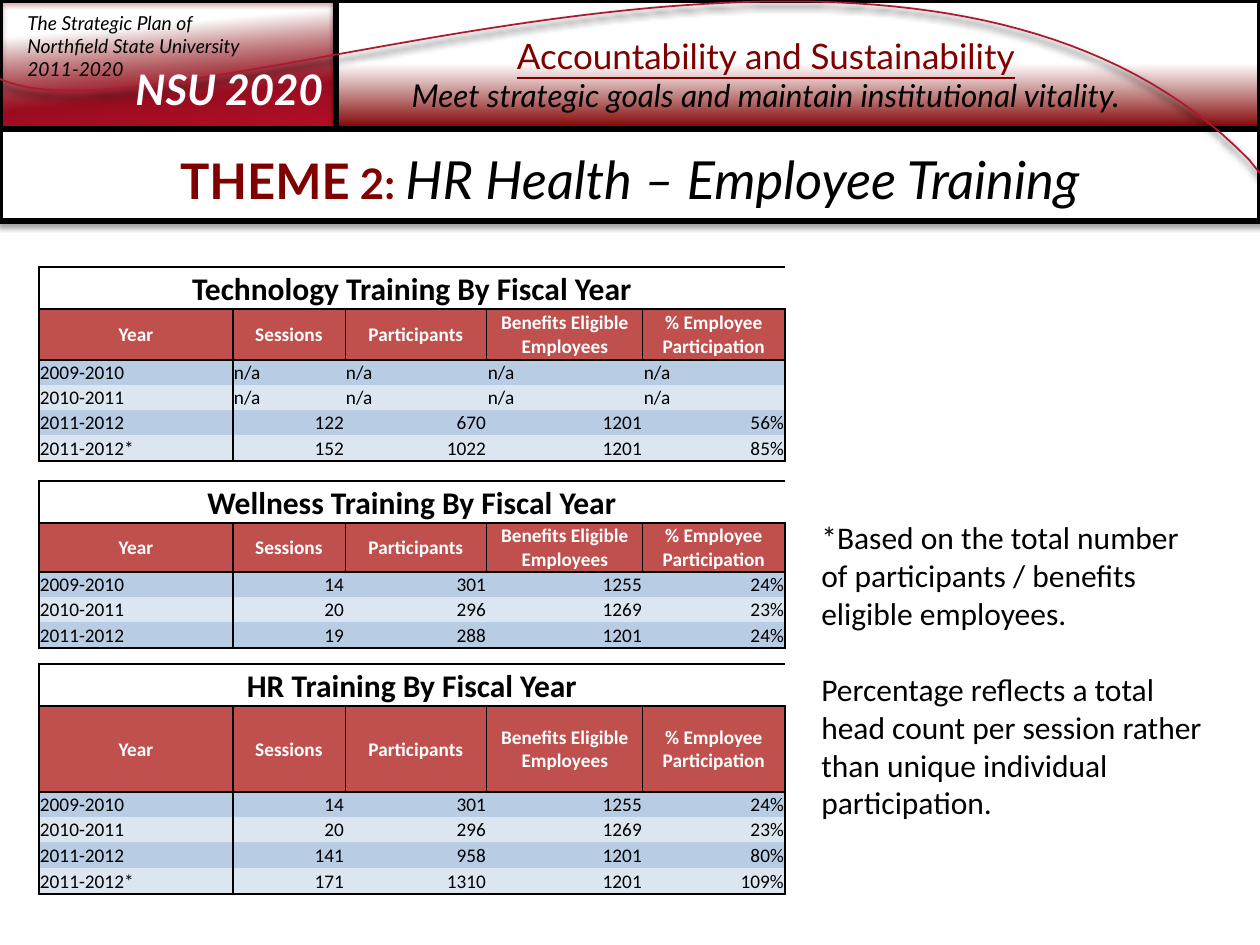
import pptx
import pptx.util
import pptx.oxml
import pptx.oxml.ns
from pptx.dml.color import RGBColor
from pptx.enum.shapes import MSO_SHAPE
from pptx.enum.text import MSO_ANCHOR, PP_ALIGN

PX = 914400 / 126
BLACK = RGBColor(0, 0, 0)
WHITE = RGBColor(255, 255, 255)
MAROON = RGBColor(0x80, 0, 0)
CURVE = RGBColor(0xAC, 0x1A, 0x2F)
HEAD = RGBColor(0xC0, 0x50, 0x4D)
BANDS = [RGBColor(0xB8, 0xCC, 0xE4), RGBColor(0xDC, 0xE6, 0xF1)]
NS = pptx.oxml.ns.nsdecls("a")
LEFT, MID, RIGHT = PP_ALIGN.LEFT, PP_ALIGN.CENTER, PP_ALIGN.RIGHT


def emu(*nums):
    return [pptx.util.Emu(round(n * PX)) for n in nums]


def write(par, words, size, face, color, align=LEFT, bold=False, italic=False, under=False):
    """Add one styled run to a paragraph."""
    par.alignment = align
    run = par.add_run()
    run.text = words
    font = run.font
    font.size, font.name = pptx.util.Pt(size), face
    font.color.rgb = color
    font.bold, font.italic, font.underline = bold, italic, under


prs = pptx.Presentation()
prs.slide_width, prs.slide_height = emu(1260, 945)
slide = prs.slides.add_slide(prs.slide_layouts[6])
shapes = slide.shapes

# Header bars: box, gradient stops (place, colour, opacity), angle, shadow colour
bars = [
    ((0, 0, 336, 129), [(24, MAROON, 0), (71, "9A0D21", 100), (100, "B70F27", 100)], 85, MAROON),
    ((336, 0, 924, 129), [(0, MAROON, 100), (51, WHITE, 100)], 270, BLACK),
    ((0, 129, 1260, 92), None, 0, BLACK),
]
cast = []
for box, stops, angle, shade in bars:
    bar = shapes.add_shape(MSO_SHAPE.RECTANGLE, *emu(*box))
    bar.line.color.rgb = BLACK
    bar.line.width = pptx.util.Pt(3.5)
    bar.fill.solid()
    bar.fill.fore_color.rgb = WHITE
    if stops:
        marks = "".join(
            f'<a:gs pos="{at * 1000}"><a:srgbClr val="{hue}">'
            f'<a:alpha val="{show * 1000}"/></a:srgbClr></a:gs>'
            for at, hue, show in stops)
        grad = pptx.oxml.parse_xml(
            f'<a:gradFill {NS} rotWithShape="1"><a:gsLst>{marks}</a:gsLst>'
            f'<a:lin ang="{angle * 60000}" scaled="0"/></a:gradFill>')
        props = bar.fill._xPr
        props.replace(props.find(pptx.oxml.ns.qn("a:solidFill")), grad)
    cast.append((bar, shade, 35, 3.1, 1.8))

# Sweeping line, a cubic curve that starts at the right edge
knots = [(1338, 287), (1067, -261), (183, 164), (0, 79)]
steps = 80
dots = []
for n in range(steps + 1):
    t = 0.08 + 0.92 * n / steps
    parts = [(1 - t) ** 3, 3 * t * (1 - t) ** 2, 3 * t * t * (1 - t), t ** 3]
    x, y = (sum(w * k[axis] for w, k in zip(parts, knots)) for axis in (0, 1))
    dots.append((min(x, 1260) * PX, y * PX))
path = shapes.build_freeform(*dots[0])
path.add_line_segments(dots[1:], close=False)
sweep = path.convert_to_shape()
sweep.fill.background()
sweep.line.color.rgb = CURVE
sweep.line.width = pptx.util.Pt(1)
cast.append((sweep, BLACK, 90, 4, 3))

for shape, shade, show, blur, dist in cast:
    shape.shadow.inherit = False
    glow = shape._element.spPr.find(pptx.oxml.ns.qn("a:effectLst"))
    glow.append(pptx.oxml.parse_xml(
        f'<a:outerShdw {NS} blurRad="{round(blur * 12700)}" dist="{round(dist * 12700)}"'
        f' dir="5400000" rotWithShape="0"><a:srgbClr val="{shade}">'
        f'<a:alpha val="{show * 1000}"/></a:srgbClr></a:outerShdw>'))

# Text boxes: box, gap before later paragraphs, paragraphs of runs
small = dict(size=11, face="Lato", color=BLACK, italic=True)
note = dict(size=18, face="Calibri", color=BLACK)
texts = [
    ((15, 5, 402, 83), 0, [
        [("The Strategic Plan of", small)],
        [("Northfield State University", small)],
        [("2011-2020", small)]]),
    ((304, 28, 924, 93), 0, [
        [("Accountability and Sustainability",
          dict(size=20, face="Lato", color=MAROON, align=MID, under=True))],
        [("Meet strategic goals and maintain institutional vitality.",
          dict(size=18, face="Lato", color=BLACK, align=MID, italic=True))]]),
    ((123, 57, 219, 63), 0, [
        [("NSU 2020", dict(size=24, face="Lato", color=WHITE, bold=True, italic=True))]]),
    ((0, 141, 1260, 77), 0, [
        [("THEME", dict(size=28, face="Lato", color=MAROON, align=MID, bold=True)),
         (" 2: ", dict(size=24, face="Lato", color=MAROON, align=MID, bold=True)),
         ("HR Health – Employee Training",
          dict(size=30, face="Lato", color=BLACK, align=MID, italic=True))]]),
    ((809, 512, 406, 318), 22, [
        [("*Based on the total number of participants / benefits eligible employees.", note)],
        [("Percentage reflects a total head count per session rather than unique "
          "individual participation.", note)]]),
]
for box, gap, pars in texts:
    frame = shapes.add_textbox(*emu(*box)).text_frame
    frame.word_wrap = True
    for n, runs in enumerate(pars):
        par = frame.add_paragraph() if n else frame.paragraphs[0]
        if n and gap:
            par.space_before = pptx.util.Pt(gap)
        for words, style in runs:
            write(par, words, **style)

# Training tables: title, top, row heights, body rows
heads = ["Year", "Sessions", "Participants", "Benefits Eligible Employees",
         "% Employee Participation"]
wide = [194, 112, 142, 156, 142]
none = ["n/a"] * 4
tables = [
    ("Technology Training By Fiscal Year", 267, [42, 51, 25, 25, 25, 26], [
        ["2009-2010", *none],
        ["2010-2011", *none],
        ["2011-2012", "122", "670", "1201", "56%"],
        ["2011-2012*", "152", "1022", "1201", "85%"]]),
    ("Wellness Training By Fiscal Year", 481, [42, 49, 25, 25, 26], [
        ["2009-2010", "14", "301", "1255", "24%"],
        ["2010-2011", "20", "296", "1269", "23%"],
        ["2011-2012", "19", "288", "1201", "24%"]]),
    ("HR Training By Fiscal Year", 664, [42, 86, 25, 25, 26, 26], [
        ["2009-2010", "14", "301", "1255", "24%"],
        ["2010-2011", "20", "296", "1269", "23%"],
        ["2011-2012", "141", "958", "1201", "80%"],
        ["2011-2012*", "171", "1310", "1201", "109%"]]),
]
for title, top, tall, body in tables:
    rows = [[title, "", "", "", ""], heads, *body]
    last = len(rows)
    grid = shapes.add_table(last, 5, *emu(39, top, sum(wide), sum(tall))).table
    grid.first_row = grid.horz_banding = False
    for col, size in zip(grid.columns, emu(*wide)):
        col.width = size
    for row, size in zip(grid.rows, emu(*tall)):
        row.height = size
    grid.cell(0, 0).merge(grid.cell(0, 4))
    for r, row in enumerate(rows):
        upright = [(0, 5), range(6), (0, 1, 5)][min(r, 2)]
        for c, words in enumerate(row):
            cell = grid.cell(r, c)
            cell.margin_left, cell.margin_right, cell.margin_top, cell.margin_bottom = emu(1, 1, 1, 0)
            cell.vertical_anchor = MSO_ANCHOR.MIDDLE if r == 1 else MSO_ANCHOR.BOTTOM
            if r == 0:
                cell.fill.background()
            else:
                cell.fill.solid()
                cell.fill.fore_color.rgb = HEAD if r == 1 else BANDS[r % 2]
            edges = [("L", c in upright, c), ("R", c + 1 in upright, c + 1),
                     ("T", r <= 2, 0), ("B", r < 2 or r == last - 1, 0)]
            props = cell._tc.get_or_add_tcPr()
            for n, (side, drawn, edge) in enumerate(edges):
                thick = 6350 if 1 < edge < 5 else 12700
                ink = '<a:solidFill><a:srgbClr val="000000"/></a:solidFill>' if drawn else "<a:noFill/>"
                props.insert(n, pptx.oxml.parse_xml(f'<a:ln{side} {NS} w="{thick}">{ink}</a:ln{side}>'))
            if words:
                align = MID if r < 2 else LEFT if c == 0 or words == "n/a" else RIGHT
                write(cell.text_frame.paragraphs[0], words, 11 if r else 18, "Calibri",
                      WHITE if r == 1 else BLACK, align, bold=r < 2)

prs.save("out.pptx")
